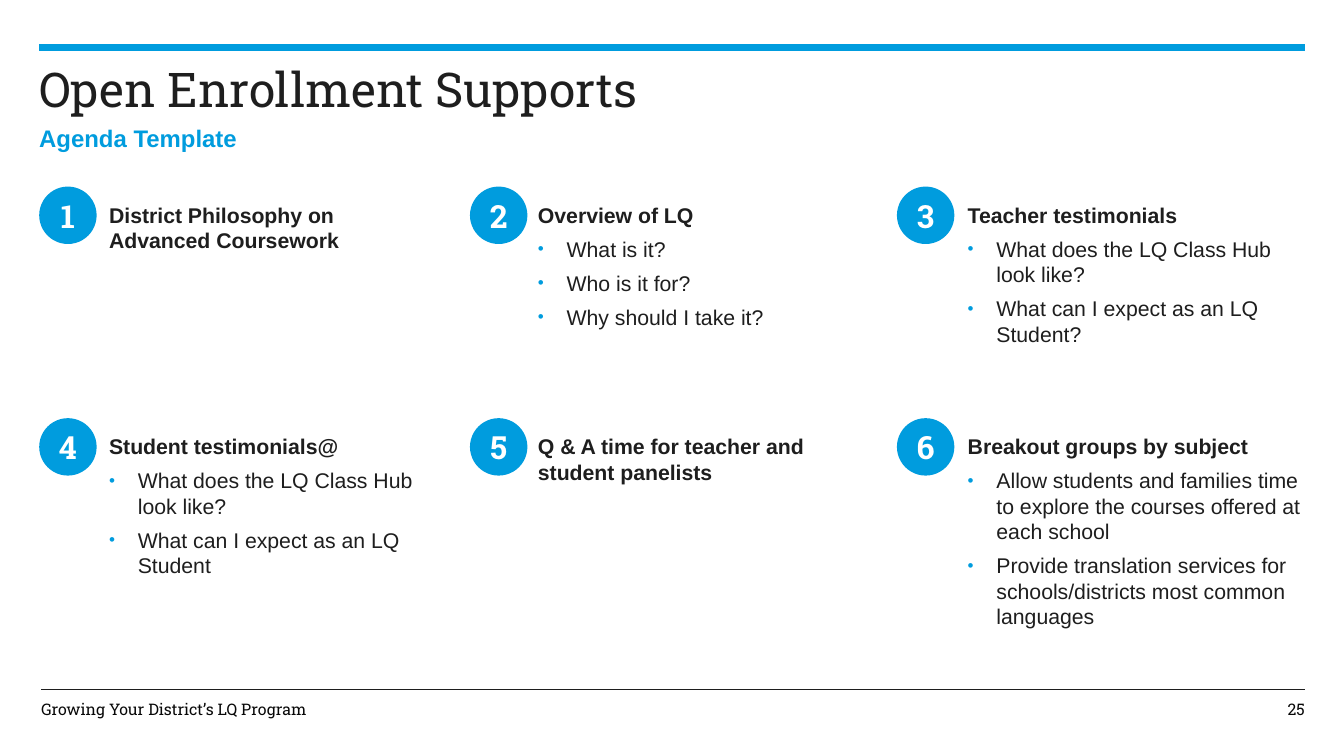
from lxml import etree
from pptx import Presentation
from pptx.dml.color import RGBColor
from pptx.enum.shapes import MSO_CONNECTOR, MSO_SHAPE
from pptx.enum.text import MSO_ANCHOR, MSO_AUTO_SIZE, PP_ALIGN
from pptx.oxml.ns import qn
from pptx.util import Inches, Pt

BLUE, INK, BLACK, WHITE = "009CDE", "1E1E1E", "080808", "FFFFFF"
SANS, SLAB = "Arial", "Roboto Slab"
LEFT, RIGHT = 0.41, 13.63
COLUMNS = [(0.41, 1.14), (4.91, 5.62), (9.37, 10.11)]  # circle left, text left
ROW_TOPS = [1.95, 4.37]
CIRCLE_SIZE = 0.6
AGENDA = [
    ("District Philosophy on\vAdvanced Coursework", []),
    ("Overview of LQ", ["What is it?", "Who is it for?", "Why should I take it?"]),
    ("Teacher testimonials", ["What does the LQ Class Hub\vlook like?",
                              "What can I expect as an LQ Student?"]),
    ("Student testimonials@", ["What does the LQ Class Hub\vlook like?",
                               "What can I expect as an LQ Student"]),
    ("Q & A time for teacher and student panelists", []),
    ("Breakout groups by subject",
     ["Allow students and families time to explore the courses offered at each school",
      "Provide translation services for schools/districts most common languages"]),
]


def color(hex_string):
    return RGBColor.from_string(hex_string)


def place(shape, left, top, width, height):
    shape.left, shape.top = Inches(left), Inches(top)
    shape.width, shape.height = Inches(width), Inches(height)


def prepare_frame(shape, anchor=MSO_ANCHOR.TOP, right=0, vertical=0):
    frame = shape.text_frame
    frame.word_wrap = True
    frame.auto_size = MSO_AUTO_SIZE.NONE
    frame.vertical_anchor = anchor
    frame.margin_left, frame.margin_right = 0, Inches(right)
    frame.margin_top = frame.margin_bottom = Inches(vertical)
    return frame


def write(paragraph, text, size, font, hex_string, bold=False, align=PP_ALIGN.LEFT):
    paragraph.text = text
    paragraph.alignment = align
    paragraph.space_before = Pt(0)
    for run in paragraph.runs:
        run.font.name, run.font.size, run.font.bold = font, Pt(size), bold
        run.font.color.rgb = color(hex_string)


def set_bullet(paragraph, shown):
    """Give the paragraph a hanging blue bullet, or clear an inherited one."""
    properties = paragraph._p.get_or_add_pPr()
    indent = Inches(0.3) if shown else 0
    properties.set("marL", str(indent))
    properties.set("indent", str(-indent))
    if not shown:
        etree.SubElement(properties, qn("a:buNone"))
        return
    bullet_color = etree.SubElement(properties, qn("a:buClr"))
    etree.SubElement(bullet_color, qn("a:srgbClr"), val=BLUE)
    etree.SubElement(properties, qn("a:buSzPct"), val="80000")
    etree.SubElement(properties, qn("a:buFont"), typeface=SANS)
    etree.SubElement(properties, qn("a:buChar"), char="•")


def add_rule(slide, left, top, hex_string, weight):
    rule = slide.shapes.add_connector(MSO_CONNECTOR.STRAIGHT, Inches(left), Inches(top),
                                      Inches(RIGHT), Inches(top))
    rule.line.color.rgb = color(hex_string)
    rule.line.width = Pt(weight)
    etree.SubElement(rule._element.spPr, qn("a:effectLst"))


def add_header(slide, left, top):
    add_rule(slide, left, top, BLUE, 5.25)
    title, subtitle = slide.shapes.title, slide.placeholders[1]
    place(title, left, top + 0.12, 13.2, 0.48)
    frame = prepare_frame(title, right=0.08)
    write(frame.paragraphs[0], "Open Enrollment Supports", 36, SLAB, INK)
    place(subtitle, left, top + 0.74, 7.5, 0.62)
    paragraph = prepare_frame(subtitle, vertical=0.05).paragraphs[0]
    write(paragraph, "Agenda Template", 18, SANS, BLUE, bold=True)
    set_bullet(paragraph, False)


def add_number(slide, number, left, top):
    circle = slide.shapes.add_shape(MSO_SHAPE.OVAL, 0, 0, 0, 0)
    place(circle, left, top, CIRCLE_SIZE, CIRCLE_SIZE)
    circle.shadow.inherit = False
    circle.fill.solid()
    circle.fill.fore_color.rgb = color(BLUE)
    circle.line.fill.background()
    frame = prepare_frame(circle, MSO_ANCHOR.MIDDLE)
    write(frame.paragraphs[0], str(number), 24, SLAB, WHITE, True, PP_ALIGN.CENTER)


def fill_item(shape, heading, points, left, top):
    place(shape, left, top, 3.5, 2.37 if points else 1.65)
    frame = prepare_frame(shape)
    write(frame.paragraphs[0], heading, 16, SANS, INK, bold=True)
    set_bullet(frame.paragraphs[0], False)
    for point in points:
        paragraph = frame.add_paragraph()
        write(paragraph, point, 16, SANS, INK)
        paragraph.space_before = Pt(6.4)
        set_bullet(paragraph, True)


def add_agenda(slide):
    for index, (heading, points) in enumerate(AGENDA):
        row, column = divmod(index, len(COLUMNS))
        circle_left, text_left = COLUMNS[column]
        top = ROW_TOPS[row]
        add_number(slide, index + 1, circle_left, top)
        if index == 0:
            shape = slide.placeholders[2]
        else:
            shape = slide.shapes.add_textbox(0, 0, 0, 0)
        fill_item(shape, heading, points, text_left, top + 0.16)


def add_footer(slide, left, top):
    add_rule(slide, left, top, INK, 0.25)
    for text, text_left, width, align in [
        ("Growing Your District’s LQ Program", left, 3, PP_ALIGN.LEFT),
        ("25", RIGHT - 0.54, 0.54, PP_ALIGN.RIGHT),
    ]:
        box = slide.shapes.add_textbox(0, 0, 0, 0)
        place(box, text_left, top + 0.13, width, 0.17)
        frame = prepare_frame(box, MSO_ANCHOR.MIDDLE)
        write(frame.paragraphs[0], text, 12, SLAB, BLACK, align=align)


def main():
    presentation = Presentation()
    presentation.slide_width, presentation.slide_height = Inches(14.04), Inches(7.9)
    slide = presentation.slides.add_slide(presentation.slide_layouts.get_by_name("Two Content"))
    add_header(slide, LEFT, 0.5)
    add_agenda(slide)
    add_footer(slide, 0.43, 7.2)
    presentation.save("out.pptx")


if __name__ == "__main__":
    main()
